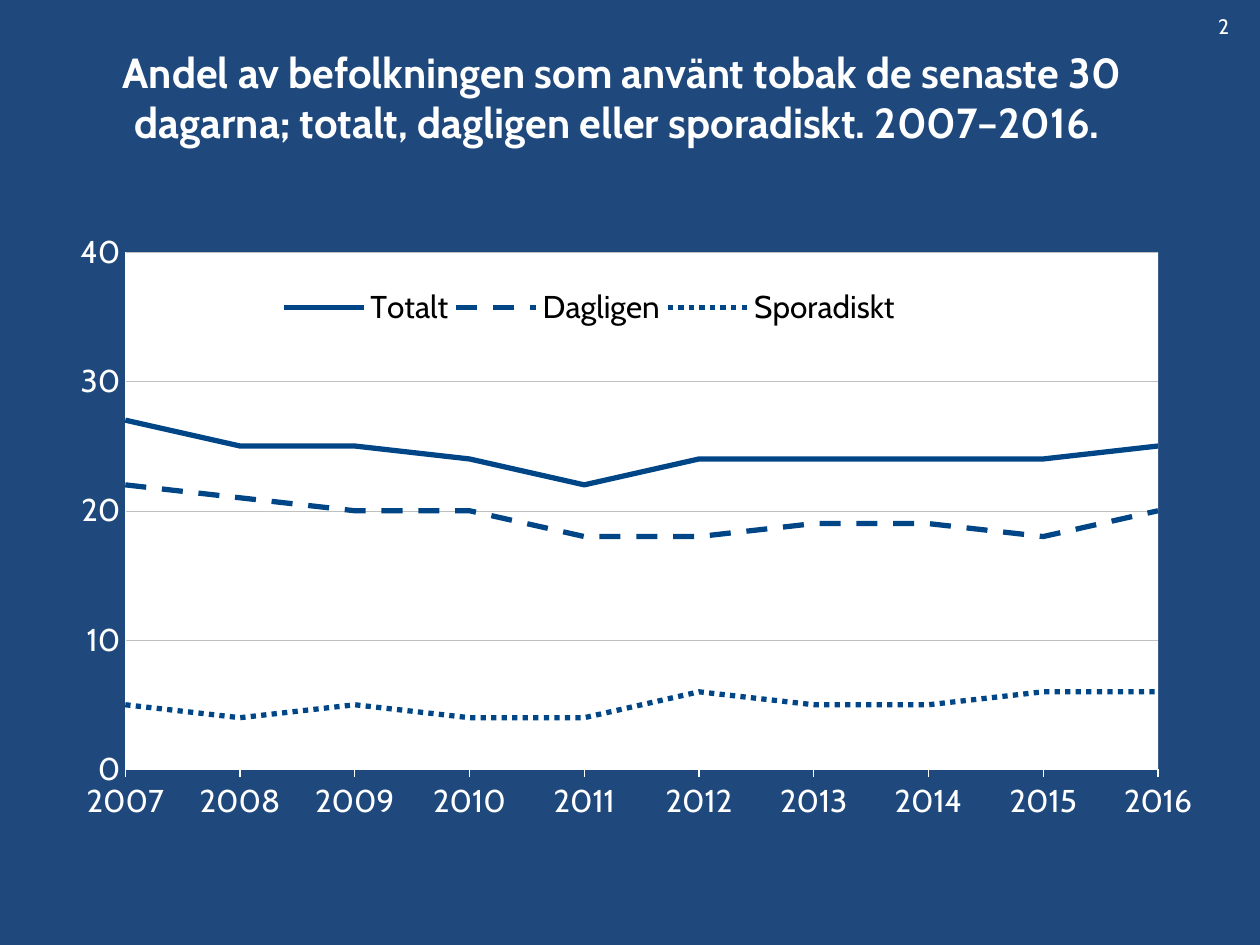
from lxml import etree
from pptx import Presentation
from pptx import util as u
from pptx.chart.data import CategoryChartData
from pptx.dml.color import RGBColor
from pptx.enum import chart as ch, dml, text
from pptx.oxml import parse_xml
from pptx.oxml.ns import nsdecls, qn

NAVY = RGBColor(0x1F, 0x49, 0x7D)
LINE_BLUE = RGBColor(0x00, 0x46, 0x87)
GRID_GREY = RGBColor(0xBF, 0xBF, 0xBF)
WHITE = RGBColor(0xFF, 0xFF, 0xFF)
BLACK = RGBColor(0x00, 0x00, 0x00)

YEARS = [str(year) for year in range(2007, 2017)]
TOBACCO_USE = {
    "Totalt": ([27, 25, 25, 24, 22, 24, 24, 24, 24, 25], dml.MSO_LINE.SOLID),
    "Dagligen": ([22, 21, 20, 20, 18, 18, 19, 19, 18, 20], dml.MSO_LINE.DASH),
    "Sporadiskt": ([5, 4, 5, 4, 4, 6, 5, 5, 6, 6], dml.MSO_LINE.ROUND_DOT),
}


def set_font(font, size, color, bold=False, name="Cabin"):
    font.name, font.size, font.bold = name, u.Pt(size), bold
    font.color.rgb = color


def set_line(line, color, width):
    line.color.rgb = color
    line.width = u.Pt(width)


def set_layout(element, index, inner=False, **place):
    """Pin a chart part at fractions (x, y, w, h) of the chart."""
    for old in element.findall(qn("c:layout")):
        element.remove(old)
    layout = parse_xml(f"<c:layout {nsdecls('c')}/>")
    manual = etree.SubElement(layout, qn("c:manualLayout"))
    values = {"layoutTarget": "inner"} if inner else {}
    values.update(xMode="edge", yMode="edge", **place)
    for tag, value in values.items():
        etree.SubElement(manual, qn(f"c:{tag}")).set("val", str(value))
    element.insert(index, layout)


class Slide:
    def __init__(self, deck):
        self.page = deck.slides.add_slide(deck.slide_layouts[6])
        fill = self.page.background.fill
        fill.solid()
        fill.fore_color.rgb = NAVY

    def add_text(self, words, place, size, bold=False, align=None,
                 margin=0.1, anchor=text.MSO_ANCHOR.TOP):
        box = self.page.shapes.add_textbox(*map(u.Inches, place))
        frame = box.text_frame
        frame.word_wrap = True
        frame.vertical_anchor = anchor
        frame.margin_left = frame.margin_right = u.Inches(margin)
        para = frame.paragraphs[0]
        para.alignment = align
        span = para.add_run()
        span.text = words
        set_font(span.font, size, WHITE, bold)

    def add_line_chart(self, categories, series, place):
        data = CategoryChartData(number_format="0")
        data.categories = categories
        for name, (values, _) in series.items():
            data.add_series(name, values)
        chart = self.page.shapes.add_chart(
            ch.XL_CHART_TYPE.LINE, *map(u.Inches, place), data).chart
        set_font(chart.font, 18, WHITE, True, "Times New Roman")
        chart.has_title = False
        chart.plots[0].vary_by_categories = False
        for line in chart.plots[0].series:
            line.smooth = False
            set_line(line.format.line, LINE_BLUE, 3)
            line.format.line.dash_style = series[line.name][1]
        self.style_axes(chart)
        self.style_legend(chart)
        self.style_plot_area(chart)

    def style_axes(self, chart):
        years, shares = chart.category_axis, chart.value_axis
        ticks = ch.XL_TICK_MARK
        for axis, tick, width in ((years, ticks.OUTSIDE, 0.75),
                                  (shares, ticks.NONE, 0.25)):
            axis.major_tick_mark = tick
            axis.minor_tick_mark = ticks.NONE
            set_font(axis.tick_labels.font, 18, WHITE)
            set_line(axis.format.line, WHITE, width)
        shares.minimum_scale, shares.maximum_scale = 0, 40
        shares.major_unit = 10
        shares.tick_labels.number_format = "0"
        shares.tick_labels.number_format_is_linked = False
        set_line(shares.major_gridlines.format.line, GRID_GREY, 0.25)

    def style_legend(self, chart):
        chart.has_legend = True
        legend = chart.legend
        legend.position = ch.XL_LEGEND_POSITION.TOP
        legend.include_in_layout = False
        set_font(legend.font, 18, BLACK)
        set_layout(legend._element, 1, x=0.2, y=0.15, w=0.54, h=0.07)

    def style_plot_area(self, chart):
        """Fill the plot white and start the lines on the value axis."""
        area = chart._chartSpace.find(".//" + qn("c:plotArea"))
        set_layout(area, 0, inner=True, x=0.07, y=0.1, w=0.89, h=0.79)
        crosses = area.find(qn("c:valAx")).find(qn("c:crosses"))
        crosses.addnext(parse_xml(
            f'<c:crossBetween {nsdecls("c")} val="midCat"/>'))
        area.append(parse_xml(
            f"<c:spPr {nsdecls('c', 'a')}><a:solidFill>"
            f'<a:srgbClr val="{WHITE}"/></a:solidFill></c:spPr>'))


def main():
    deck = Presentation()
    deck.slide_width, deck.slide_height = u.Inches(10), u.Inches(7.5)
    slide = Slide(deck)
    slide.add_text(
        "Andel av befolkningen som använt tobak de senaste 30 dagarna; "
        "totalt, dagligen eller sporadiskt. 2007–2016. ",
        (0.23, 0.14, 9.41, 1.25), 24, bold=True, margin=0.15,
        align=text.PP_ALIGN.CENTER, anchor=text.MSO_ANCHOR.MIDDLE)
    slide.add_line_chart(YEARS, TOBACCO_USE, (0.35, 1.48, 9.21, 5.2))
    slide.add_text("2", (9.57, 0.06, 0.43, 0.3), 12)
    deck.save("out.pptx")


if __name__ == "__main__":
    main()
